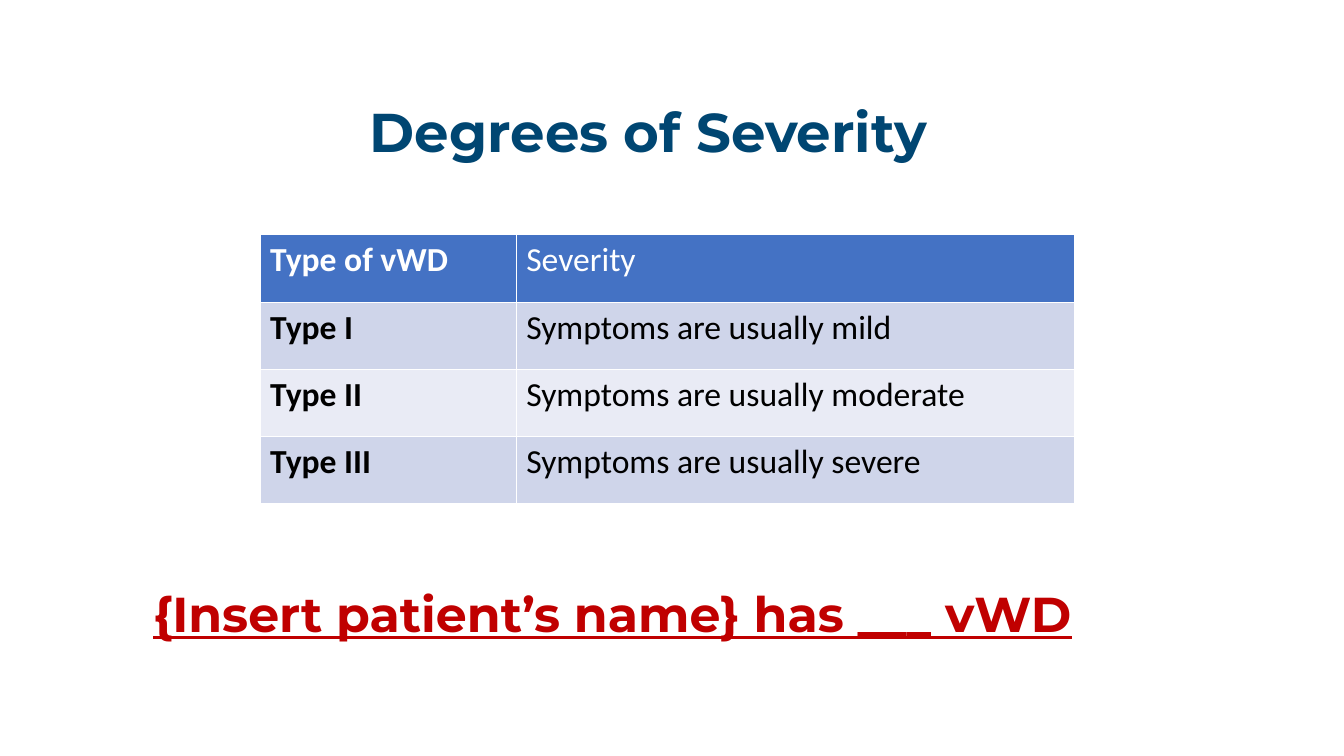
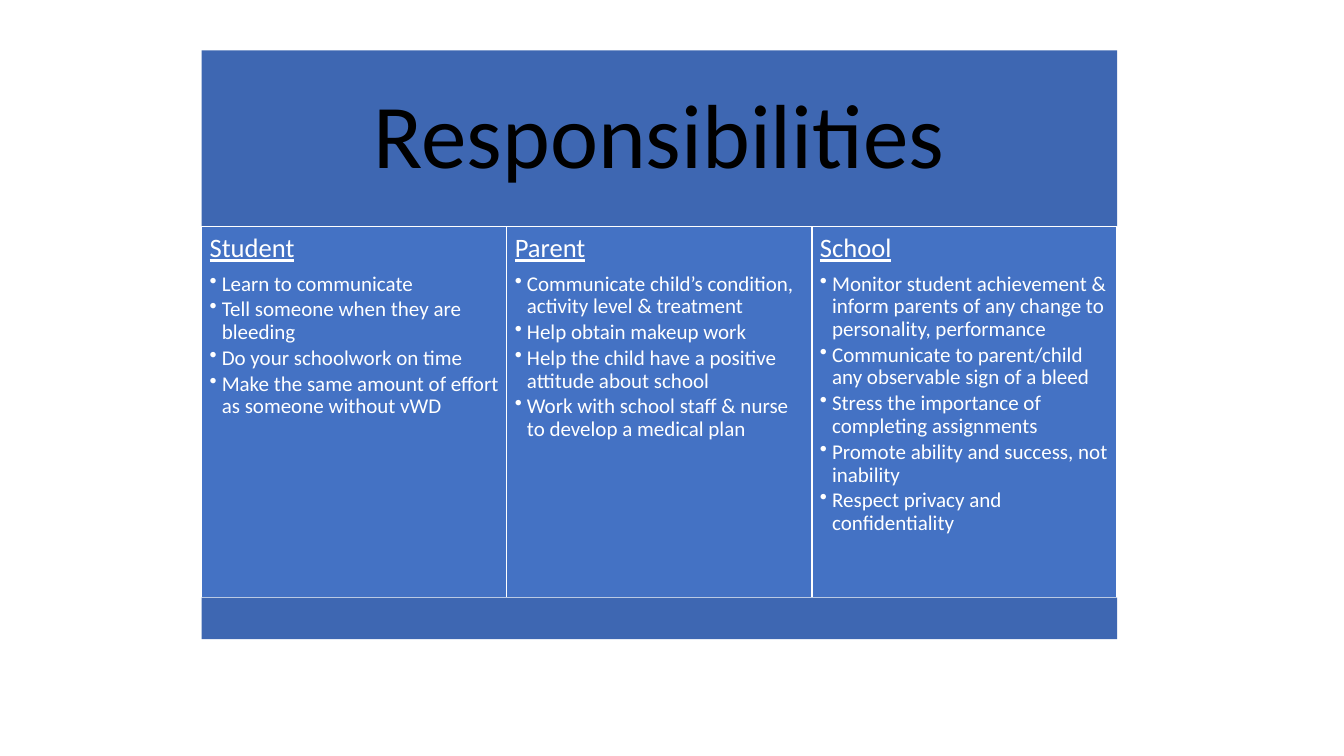
import pptx
import pptx.dml.color
import pptx.enum.shapes
import pptx.enum.text
import pptx.oxml
import pptx.oxml.ns
import pptx.util

Inches, Pt = pptx.util.Inches, pptx.util.Pt
ALIGN, ANCHOR = pptx.enum.text.PP_ALIGN, pptx.enum.text.MSO_ANCHOR
RECT = pptx.enum.shapes.MSO_SHAPE.RECTANGLE

WHITE, BLACK, NAVY, RED = "FFFFFF", "000000", "004672", "C00000"
BLUE, DEEP, TINT, PALE = "4472C4", "3E67B2", "CFD5EA", "E9EBF5"
HEAD, BODY = "Montserrat", "Calibri"

TITLE = dict(name=HEAD, size=Pt(39), bold=True)
NOTE = dict(name=HEAD, size=Pt(35), bold=True, underline=True)
CELL = dict(name=BODY, size=Pt(24))
BANNER = dict(name=BODY, size=Pt(65))
ROLE = dict(name=BODY, size=Pt(19), underline=True)
DUTY = dict(name=BODY, size=Pt(15))

TYPES = [
    ("Type of vWD", "Severity"),
    ("Type I", "Symptoms are usually mild"),
    ("Type II", "Symptoms are usually moderate"),
    ("Type III", "Symptoms are usually severe"),
]
ROLES = {
    "Student": [
        "Learn to communicate",
        "Tell someone when they are bleeding",
        "Do your schoolwork on time",
        "Make the same amount of effort as someone without vWD",
    ],
    "Parent": [
        "Communicate child’s condition, activity level & treatment",
        "Help obtain makeup work",
        "Help the child have a positive attitude about school",
        "Work with school staff & nurse to develop a medical plan",
    ],
    "School": [
        "Monitor student achievement & inform parents of any change to personality, performance",
        "Communicate to parent/child any observable sign of a bleed",
        "Stress the importance of completing assignments",
        "Promote ability and success, not inability",
        "Respect privacy and confidentiality",
    ],
}


def rgb(code):
    return pptx.dml.color.RGBColor.from_string(code)


def style(item, values):
    for key, value in values.items():
        setattr(item, key, value)


def paint(item, code):
    item.fill.solid()
    item.fill.fore_color.rgb = rgb(code)


def write(par, text, font, color, **form):
    style(par, form)
    run = par.add_run()
    run.text = text
    style(run.font, font)
    run.font.color.rgb = rgb(color)


def frame(shape, pad, anchor):
    """Set wrapping, equal insets and anchor; return the text frame."""
    text = shape.text_frame
    style(text, dict(word_wrap=True, vertical_anchor=anchor))
    style(text, {"margin_" + side: Inches(pad)
                 for side in ("left", "right", "top", "bottom")})
    return text


def label(slide, box, text, font, color, align):
    shape = slide.shapes.add_textbox(*map(Inches, box))
    par = frame(shape, 0.1, ANCHOR.MIDDLE).paragraphs[0]
    write(par, text, font, color, alignment=align)


def block(slide, box, fill, edge=None):
    shape = slide.shapes.add_shape(RECT, *map(Inches, box))
    shape.shadow.inherit = False
    paint(shape, fill)
    if edge:
        shape.line.color.rgb = rgb(edge)
        shape.line.width = Pt(1)
    else:
        shape.line.fill.background()
    return shape


def bullet(par, indent):
    props = par._p.get_or_add_pPr()
    props.set("marL", str(Inches(indent)))
    props.set("indent", str(-Inches(indent)))
    mark = pptx.oxml.ns.qn("a:buChar")
    props.append(props.makeelement(mark, {"char": "•"}))


def border(cell, color, width):
    props = cell._tc.get_or_add_tcPr()
    for side in "LRTB":
        props.append(pptx.oxml.parse_xml(
            f'<a:ln{side} {pptx.oxml.ns.nsdecls("a")} w="{Pt(width)}">'
            f'<a:solidFill><a:srgbClr val="{color}"/></a:solidFill></a:ln{side}>'))


def grid(slide, box, widths, rows):
    shape = slide.shapes.add_table(len(rows), len(widths), *map(Inches, box))
    table = shape.table
    for col, width in zip(table.columns, widths):
        col.width = Inches(width)
    for i, row in enumerate(rows):
        fill = BLUE if i == 0 else TINT if i % 2 else PALE
        for j, text in enumerate(row):
            cell = table.cell(i, j)
            border(cell, WHITE, 1)
            paint(cell, fill)
            write(cell.text_frame.paragraphs[0], text,
                  CELL | {"bold": j == 0}, BLACK if i else WHITE)


def column(slide, box, role, duties):
    text = frame(block(slide, box, BLUE, WHITE), 0.08, ANCHOR.TOP)
    write(text.paragraphs[0], role, ROLE, WHITE, alignment=ALIGN.LEFT,
          line_spacing=0.9, space_after=Pt(6.65))
    for duty in duties:
        par = text.add_paragraph()
        bullet(par, 0.12)
        write(par, duty, DUTY, WHITE, alignment=ALIGN.LEFT,
              line_spacing=0.9, space_after=Pt(2.25))


def board(slide, box, title, roles):
    """Draw a banner, one column for each role and a closing band."""
    left, top, width, height = box
    upper, lower = 1.75, 0.41
    middle = height - upper - lower
    banner = block(slide, (left, top, width, upper), DEEP)
    par = frame(banner, 0.27, ANCHOR.MIDDLE).paragraphs[0]
    write(par, title, BANNER, BLACK, alignment=ALIGN.CENTER, line_spacing=0.9)
    step = width / len(roles)
    for i, (role, duties) in enumerate(roles.items()):
        column(slide, (left + i * step, top + upper, step, middle), role, duties)
    block(slide, (left, top + upper + middle, width, lower), DEEP)


def main():
    deck = pptx.Presentation()
    style(deck, dict(slide_width=Inches(13.33), slide_height=Inches(7.5)))
    blank = deck.slide_layouts[6]

    slide = deck.slides.add_slide(blank)
    label(slide, (1.02, 0, 10.82, 2.59), "Degrees of Severity",
          TITLE, NAVY, ALIGN.CENTER)
    grid(slide, (2.58, 2.33, 8.08, 2.67), (2.54, 5.54), TYPES)
    label(slide, (1.42, 5.58, 10.08, 1), "{Insert patient’s name} has ___ vWD",
          NOTE, RED, ALIGN.LEFT)

    slide = deck.slides.add_slide(blank)
    board(slide, (2, 0.5, 9.08, 5.84), "Responsibilities", ROLES)

    deck.save("out.pptx")


if __name__ == "__main__":
    main()
